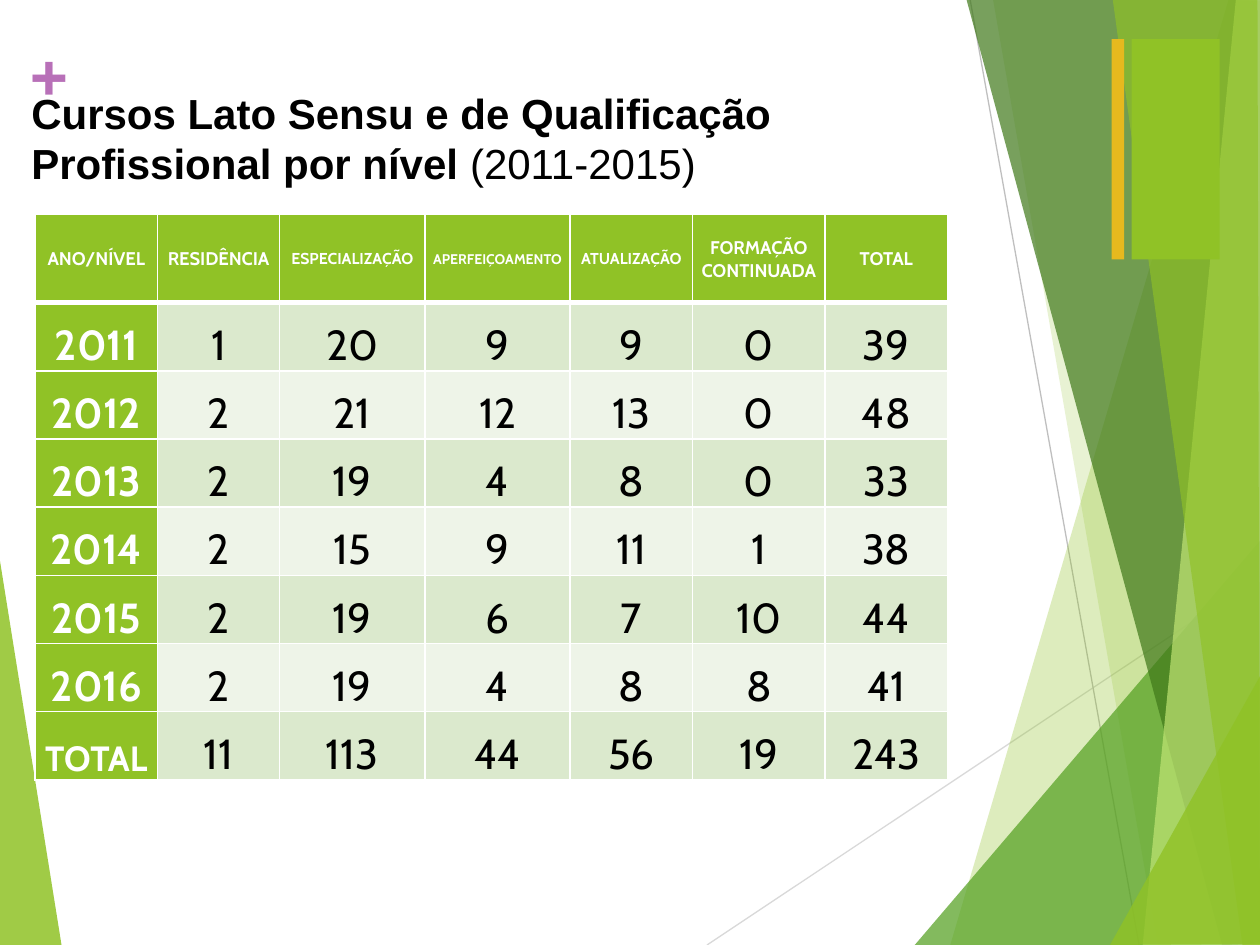
from lxml import etree
from pptx import Presentation
from pptx import util as u
from pptx.dml.color import RGBColor
from pptx.enum import shapes, text
from pptx.oxml import ns

LIME = RGBColor(0x90, 0xC2, 0x26)
GREEN = RGBColor(0x54, 0xA0, 0x21)
FOREST = RGBColor(0x3F, 0x78, 0x19)
PALE_LIME = RGBColor(0xC0, 0xE4, 0x74)
GOLD = RGBColor(0xE6, 0xB9, 0x1E)
PURPLE = RGBColor(0xB8, 0x70, 0xB8)
BAND_DARK = RGBColor(0xDB, 0xE9, 0xCD)
BAND_LIGHT = RGBColor(0xEE, 0xF4, 0xE8)
LIGHT_GRAY = RGBColor(0xD9, 0xD9, 0xD9)
GRAY = RGBColor(0xBF, 0xBF, 0xBF)
WHITE = RGBColor(0xFF, 0xFF, 0xFF)
BLACK = RGBColor(0, 0, 0)

LEFT_FACET = ([(-0.7, 316), (35.3, 540.7), (-0.7, 540)], LIME, 85)
RIGHT_FACETS = [
    ([(702, 0), (543, 540), (721, 540.7), (721, 0.7)], LIME, 30),
    ([(567.4, -0.7), (661.7, 540), (720.7, 540), (720.7, -0.7)], LIME, 20),
    ([(522.7, 540), (720, 309), (720.7, 540)], GREEN, 72),
    ([(552.2, -0.7), (698.4, 540), (720.7, 539.3), (720.7, -0.7)], FOREST, 70),
    ([(706.3, -0.7), (653, 540), (720.7, 540), (720, -0.7)], PALE_LIME, 70),
    ([(635.8, -0.7), (710, 540), (720, 540), (718.6, -0.7)], LIME, 65),
    ([(634.3, 540), (720.7, 385.2), (720.7, 539.3)], LIME, 80),
]

HEADERS = [("ANO/NÍVEL", 10.5), ("RESIDÊNCIA", 10.5), ("ESPECIALIZAÇÃO", 9),
           ("APERFEIÇOAMENTO", 8), ("ATUALIZAÇÃO", 9),
           ("FORMAÇÃO CONTINUADA", 10.5), ("TOTAL", 10.5)]
COURSES = [
    ("2011", 1, 20, 9, 9, 0, 39),
    ("2012", 2, 21, 12, 13, 0, 48),
    ("2013", 2, 19, 4, 8, 0, 33),
    ("2014", 2, 15, 9, 11, 1, 38),
    ("2015", 2, 19, 6, 7, 10, 44),
    ("2016", 2, 19, 4, 8, 8, 41),
    ("TOTAL", 11, 113, 44, 56, 19, 243),
]
COLUMN_WIDTHS = [69.9, 69.9, 83, 83, 69.9, 75.8, 69.9]
HEADER_HEIGHT, ROW_HEIGHT = 50.4, 38.95


def add_facet(slide, points, color, opacity):
    corners = [(u.Pt(x), u.Pt(y)) for x, y in points]
    builder = slide.shapes.build_freeform(*corners[0])
    builder.add_line_segments(corners[1:], close=True)
    facet = builder.convert_to_shape()
    paint(facet, color)
    fill_color = facet.fill._xPr.find(ns.qn("a:solidFill"))[0]
    etree.SubElement(fill_color, ns.qn("a:alpha"), val=str(opacity * 1000))


def paint(shape, color):
    shape.shadow.inherit = False
    shape.fill.solid()
    shape.fill.fore_color.rgb = color
    shape.line.fill.background()


def add_bar(slide, left, top, width, height, color):
    bar = slide.shapes.add_shape(shapes.MSO_SHAPE.RECTANGLE, u.Pt(left),
                                 u.Pt(top), u.Pt(width), u.Pt(height))
    paint(bar, color)


def add_line(slide, start, end, color):
    line = slide.shapes.add_connector(shapes.MSO_CONNECTOR.STRAIGHT,
                                      *map(u.Pt, start + end))
    line.line.color.rgb = color
    line.line.width = u.Pt(0.75)
    etree.SubElement(line._element.spPr, ns.qn("a:effectLst"))


def add_span(para, words, font, size, color, bold):
    span = para.add_run()
    span.text = words
    span.font.name = font
    span.font.size = u.Pt(size)
    span.font.color.rgb = color
    span.font.bold = bold


def add_plus(slide):
    box = slide.shapes.add_textbox(u.Pt(17.3), u.Pt(18), u.Pt(20.2), u.Pt(43.9))
    frame = box.text_frame
    frame.margin_left = frame.margin_right = u.Pt(0)
    frame.margin_top = frame.margin_bottom = u.Pt(0)
    add_span(frame.paragraphs[0], "+", "TeX Gyre Bonum", 36, PURPLE, True)


def add_title(slide):
    box = slide.shapes.add_textbox(u.Pt(10.8), u.Pt(43.9), u.Pt(509.8), u.Pt(94.3))
    frame = box.text_frame
    frame.word_wrap = True
    frame.vertical_anchor = text.MSO_ANCHOR.TOP
    frame.margin_top = u.Pt(5.8)
    para = frame.paragraphs[0]
    add_span(para, "Cursos Lato Sensu e de Qualificação Profissional por nível ",
             "Arial", 24, BLACK, True)
    add_span(para, "(2011-2015)", "Arial", 24, BLACK, False)


def set_borders(cell, bottom, top):
    properties = cell._tc.get_or_add_tcPr()
    sides = {"a:lnL": 1, "a:lnR": 1, "a:lnT": top, "a:lnB": bottom}
    for position, (side, width) in enumerate(sides.items()):
        border = etree.Element(ns.qn(side), w=str(u.Pt(width)))
        fill = etree.SubElement(border, ns.qn("a:solidFill"))
        etree.SubElement(fill, ns.qn("a:srgbClr"), val=str(WHITE))
        properties.insert(position, border)


def fill_cell(cell, words, size, color, background, bold, anchor):
    cell.margin_left = cell.margin_right = u.Pt(3.6)
    cell.margin_top = cell.margin_bottom = u.Pt(0)
    cell.vertical_anchor = anchor
    cell.fill.solid()
    cell.fill.fore_color.rgb = background
    para = cell.text_frame.paragraphs[0]
    para.alignment = text.PP_ALIGN.CENTER
    para.line_spacing = 1.07
    add_span(para, words, "Cabin", size, color, bold)


def add_courses_table(slide):
    row_count = len(COURSES) + 1
    height = HEADER_HEIGHT + ROW_HEIGHT * len(COURSES)
    table = slide.shapes.add_table(
        row_count, len(HEADERS), u.Pt(20.1), u.Pt(122.6),
        u.Pt(sum(COLUMN_WIDTHS)), u.Pt(height)).table
    table.first_row = table.horz_banding = False
    for column, width in zip(table.columns, COLUMN_WIDTHS):
        column.width = u.Pt(width)
    for index, row in enumerate(table.rows):
        row.height = u.Pt(ROW_HEIGHT if index else HEADER_HEIGHT)

    for column, (words, size) in enumerate(HEADERS):
        cell = table.cell(0, column)
        fill_cell(cell, words, size, WHITE, LIME, True, text.MSO_ANCHOR.MIDDLE)
        set_borders(cell, bottom=3, top=1)

    for row, values in enumerate(COURSES, start=1):
        band = BAND_DARK if row % 2 else BAND_LIGHT
        for column, value in enumerate(values):
            cell = table.cell(row, column)
            label = column == 0
            fill_cell(cell, str(value), 20 if value == "TOTAL" else 24,
                      WHITE if label else BLACK, LIME if label else band,
                      label, text.MSO_ANCHOR.BOTTOM)
            set_borders(cell, bottom=1, top=3 if row == 1 else 1)


def main():
    deck = Presentation()
    deck.slide_width, deck.slide_height = u.Pt(720), u.Pt(540)
    slide = deck.slides.add_slide(deck.slide_layouts[6])
    add_facet(slide, *LEFT_FACET)
    add_line(slide, (404, 540), (720.7, 329), LIGHT_GRAY)
    add_line(slide, (554.4, 0), (650.9, 540), GRAY)
    for facet in RIGHT_FACETS:
        add_facet(slide, *facet)
    add_bar(slide, 646.6, 22.3, 50.4, 126, LIME)
    add_plus(slide)
    add_bar(slide, 635.2, 22.3, 7.2, 126, GOLD)
    add_courses_table(slide)
    add_title(slide)
    deck.save("out.pptx")


if __name__ == "__main__":
    main()
